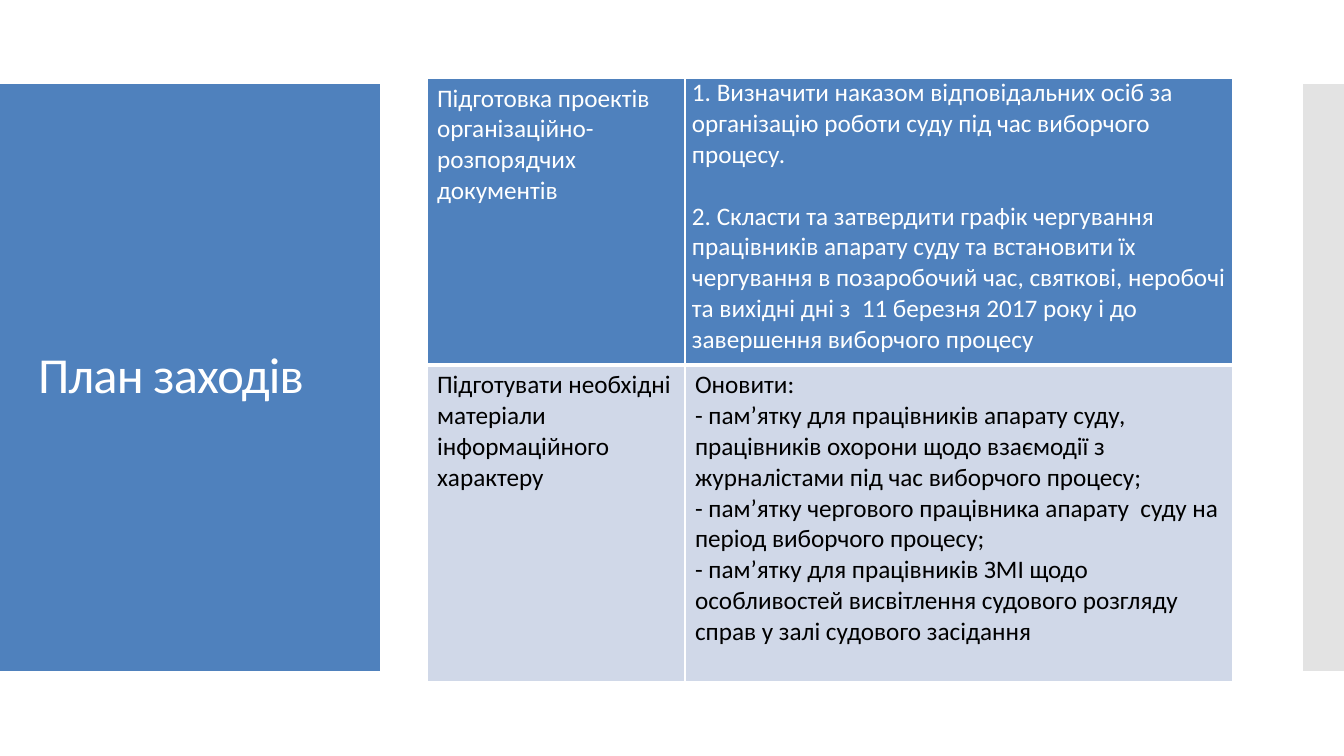
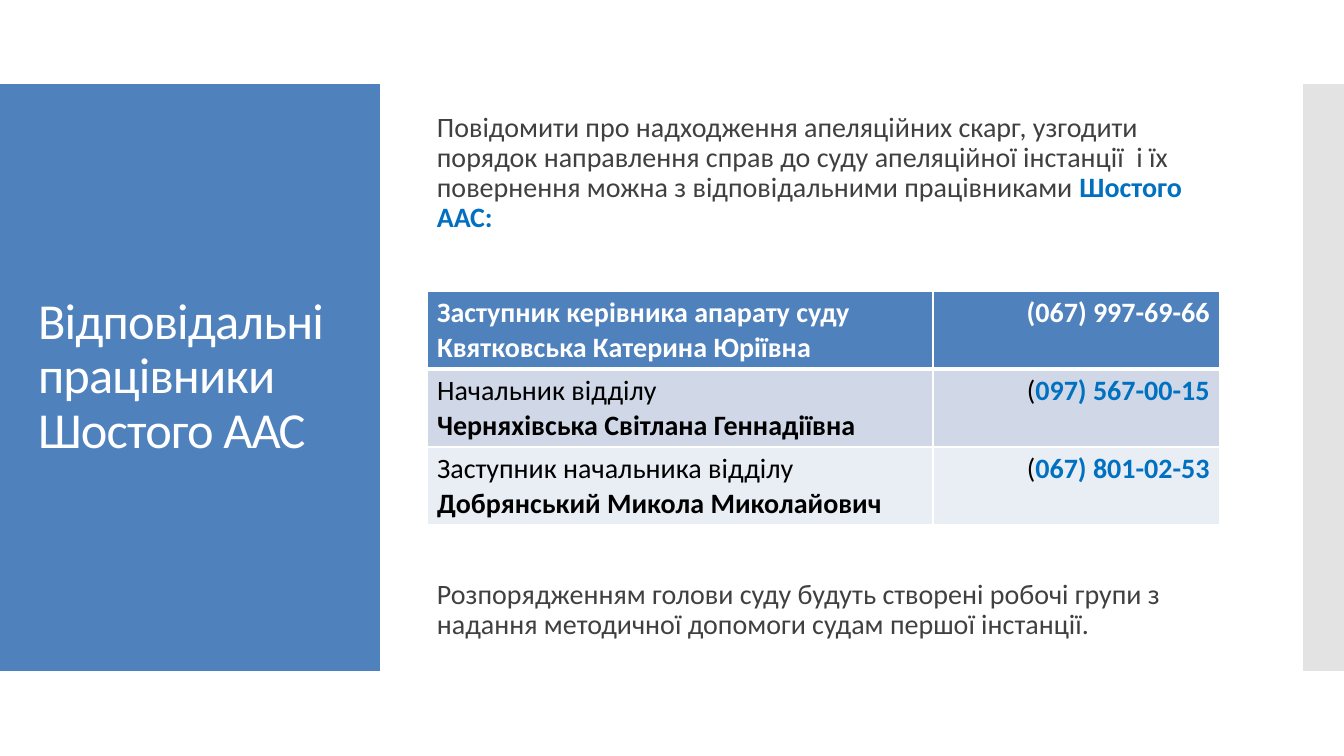
from lxml import etree
from pptx import Presentation
from pptx.dml.color import RGBColor
from pptx.enum.shapes import MSO_SHAPE as Shape
from pptx.enum.text import MSO_ANCHOR as Anchor, PP_ALIGN as Align
from pptx.oxml.ns import qn
from pptx.util import Emu, Pt

# Shared look
FONT = "Calibri"
WHITE = RGBColor(0xFF, 0xFF, 0xFF)
BLACK = RGBColor(0x00, 0x00, 0x00)
GREY_TEXT = RGBColor(0x40, 0x40, 0x40)
ACCENT = RGBColor(0x00, 0x70, 0xC0)
BLUE = RGBColor(0x4F, 0x81, 0xBD)
PALE_GREY = RGBColor(0xE3, 0xE3, 0xE3)
ROW_FILLS = [BLUE, RGBColor(0xD0, 0xD8, 0xE8), RGBColor(0xE9, 0xED, 0xF4)]

SLIDE_SIZE = (1344, 756)
BANDS = [((0, 84, 380, 587), BLUE), ((1303, 84, 41, 587), PALE_GREY)]
TITLE_BOX = (28, 124, 325, 507)
CONTENT_LEFT = 427
CONTENT_WIDTH = 806

# Content: a cell is a list of paragraphs, a paragraph is a list of (text, style) runs
PLAIN, BOLD, MARKED = "plain", "bold", "marked"

PLAN_TITLE = "План заходів"
PLAN_ROWS = [
    [
        [[("Підготовка проектів організаційно-розпорядчих документів", PLAIN)]],
        [
            [("1. Визначити наказом відповідальних осіб за організацію роботи суду "
              "під час виборчого процесу.", PLAIN)],
            [("2. Скласти та затвердити графік чергування працівників апарату суду "
              "та встановити їх чергування в позаробочий час, святкові, неробочі та "
              "вихідні дні з  11 березня 2017 року і до завершення виборчого процесу",
              PLAIN)],
        ],
    ],
    [
        [[("Підготувати необхідні матеріали інформаційного характеру", PLAIN)]],
        [
            [("Оновити:", PLAIN)],
            [("- пам’ятку для працівників апарату суду, працівників охорони щодо "
              "взаємодії з журналістами під час виборчого процесу;", PLAIN)],
            [("- пам’ятку чергового працівника апарату  суду на період виборчого "
              "процесу;", PLAIN)],
            [("- пам’ятку для працівників ЗМІ щодо особливостей висвітлення судового "
              "розгляду справ у залі судового засідання", PLAIN)],
        ],
    ],
]

STAFF_TITLE = "Відповідальні працівники Шостого ААС"
STAFF_NOTES = [
    (108, 130, [("Повідомити про надходження апеляційних скарг, узгодити порядок "
                 "направлення справ до суду апеляційної інстанції  і їх повернення "
                 "можна з відповідальними працівниками ", PLAIN),
                ("Шостого ААС:", MARKED)]),
    (575, 72, [("Розпорядженням голови суду будуть створені робочі групи з надання "
                "методичної допомоги судам першої інстанції.", PLAIN)]),
]
STAFF_ROWS = [
    [
        [[("Заступник керівника апарату суду Квятковська Катерина Юріївна", BOLD)]],
        [[("(067) 997-69-66", BOLD)]],
    ],
    [
        [[("Начальник відділу", PLAIN)], [("Черняхівська Світлана Геннадіївна", BOLD)]],
        [[("(", PLAIN), ("097) 567-00-15", MARKED)]],
    ],
    [
        [[("Заступник начальника відділу ", PLAIN),
          ("Добрянський Микола Миколайович", BOLD)]],
        [[("(", PLAIN), ("067) 801-02-53", MARKED)]],
    ],
]


def px(length):
    return Emu(round(length * 12192000 / SLIDE_SIZE[0]))


def place(box):
    return [px(length) for length in box]


# Text
def format_run(run, size, color, bold=False):
    run.font.name = FONT
    run.font.size = Pt(size)
    run.font.color.rgb = color
    run.font.bold = bold


def fill_paragraph(paragraph, runs, size, color):
    for text, style in runs:
        run = paragraph.add_run()
        run.text = text
        format_run(run, size, ACCENT if style == MARKED else color, style != PLAIN)


def fill_frame(text_frame, paragraphs, size, color, align=Align.LEFT):
    for index, runs in enumerate(paragraphs):
        paragraph = text_frame.add_paragraph() if index else text_frame.paragraphs[0]
        paragraph.alignment = align
        fill_paragraph(paragraph, runs, size, color)


def add_note(slide, top, height, runs):
    box = slide.shapes.add_textbox(*place((CONTENT_LEFT, top, CONTENT_WIDTH, height)))
    box.text_frame.word_wrap = True
    fill_frame(box.text_frame, [runs], 20, GREY_TEXT)
    box.text_frame.paragraphs[0].line_spacing = 0.9


# Tables
def set_borders(cell, bottom, top):
    properties = cell._tc.get_or_add_tcPr()
    for side, width in (("L", 1), ("R", 1), ("T", top), ("B", bottom)):
        line = etree.SubElement(properties, qn(f"a:ln{side}"), w=str(Pt(width)))
        fill = etree.SubElement(line, qn("a:solidFill"))
        etree.SubElement(fill, qn("a:srgbClr"), val=str(WHITE))


def add_table(slide, top, widths, heights, rows, size, aligns):
    box = (CONTENT_LEFT, top, sum(widths), sum(heights))
    table = slide.shapes.add_table(len(rows), len(widths), *place(box)).table
    for column, width in zip(table.columns, widths):
        column.width = px(width)
    for row, height in zip(table.rows, heights):
        row.height = px(height)
    for row_index, row in enumerate(rows):
        for column_index, paragraphs in enumerate(row):
            cell = table.cell(row_index, column_index)
            set_borders(cell, bottom=1 if row_index else 3,
                        top=3 if row_index == 1 else 1)
            cell.fill.solid()
            cell.fill.fore_color.rgb = ROW_FILLS[row_index]
            fill_frame(cell.text_frame, paragraphs, size,
                       BLACK if row_index else WHITE, aligns[column_index])
    return table


# Slide frame
def add_bands(slide, layout):
    """Draw the side bands and hand them to the layout, behind its placeholders."""
    for box, color in BANDS:
        band = slide.shapes.add_shape(Shape.RECTANGLE, *place(box))
        band.shadow.inherit = False
        band.fill.solid()
        band.fill.fore_color.rgb = color
        band.line.fill.background()
        layout.shapes._spTree.insert(2, band._element)


def add_titled_slide(presentation, layout, text):
    slide = presentation.slides.add_slide(layout)
    title = slide.shapes.title
    title.left, title.top, title.width, title.height = place(TITLE_BOX)
    title.text_frame.text = text
    title.text_frame.word_wrap = True
    title.text_frame.vertical_anchor = Anchor.MIDDLE
    paragraph = title.text_frame.paragraphs[0]
    paragraph.alignment = Align.LEFT
    paragraph.line_spacing = 0.9
    run = paragraph.runs[0]
    format_run(run, 36, WHITE)
    run._r.get_or_add_rPr().set("spc", "-60")
    return slide


def main():
    presentation = Presentation()
    presentation.slide_width, presentation.slide_height = place(SLIDE_SIZE)
    layout = presentation.slide_layouts.get_by_name("Title Only")

    # Plan of measures
    slide = add_titled_slide(presentation, layout, PLAN_TITLE)
    add_bands(slide, layout)
    table = add_table(slide, 78, (258, 548), (287, 317), PLAN_ROWS, 18,
                      (Align.LEFT, Align.LEFT))
    orders = table.cell(0, 1)
    orders.margin_left = orders.margin_right = px(7)
    orders.margin_top = orders.margin_bottom = 0
    orders.text_frame.paragraphs[1].space_before = Pt(22)

    # Responsible staff
    slide = add_titled_slide(presentation, layout, STAFF_TITLE)
    for top, height, runs in STAFF_NOTES:
        add_note(slide, top, height, runs)
    add_table(slide, 291, (506, 287), (78, 78, 78), STAFF_ROWS, 20,
              (Align.LEFT, Align.RIGHT))

    presentation.save("out.pptx")


if __name__ == "__main__":
    main()
